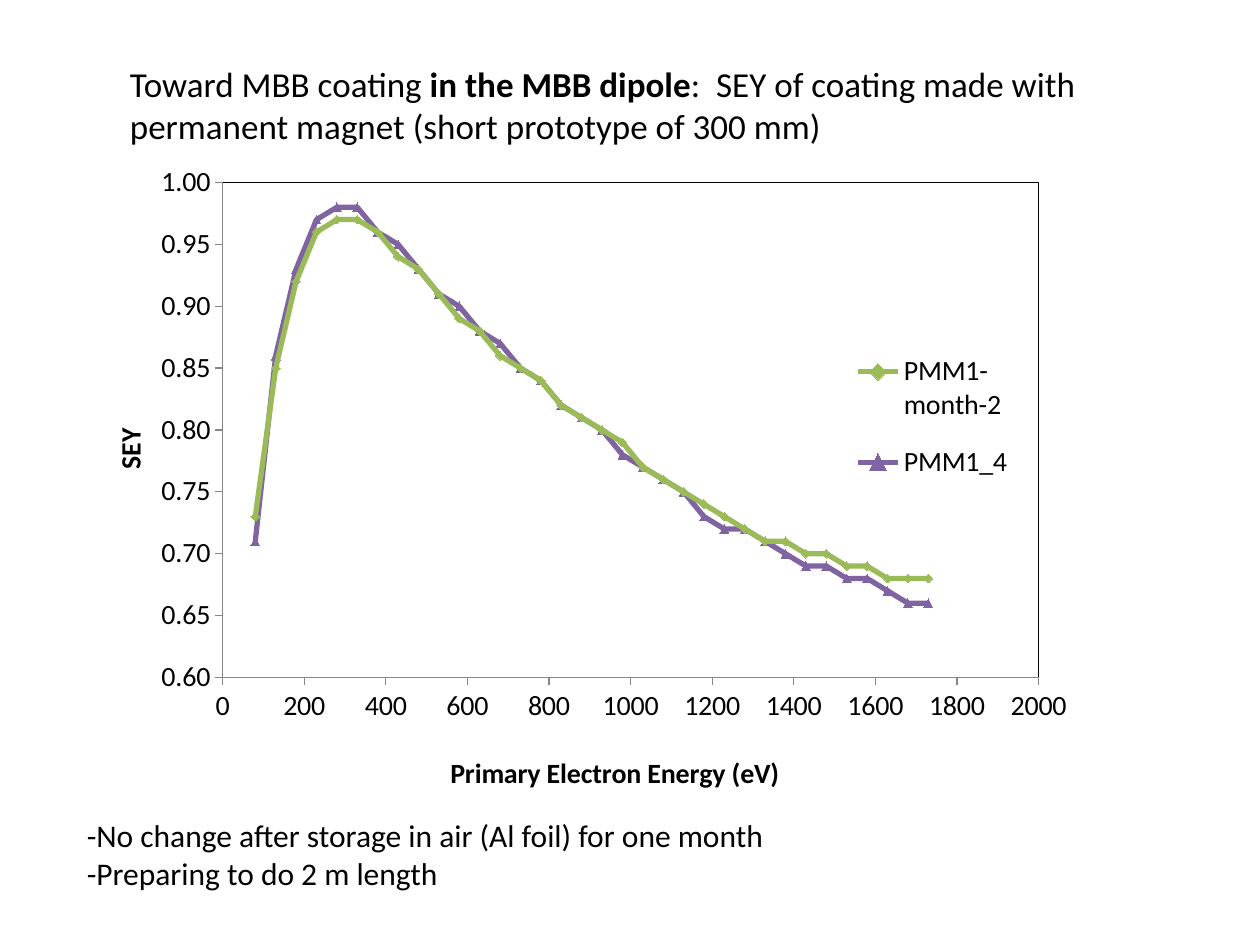
"""Build the slide on the SEY of coatings made with a permanent magnet."""
import pptx
import pptx.chart.data
import pptx.dml.color
import pptx.enum.chart
import pptx.enum.text
import pptx.oxml
import pptx.oxml.ns
import pptx.util

Pt = pptx.util.Pt
RGB = pptx.dml.color.RGBColor
XL = pptx.enum.chart
MARK = XL.XL_MARKER_STYLE
BLACK = RGB(0, 0, 0)
GREY = RGB(0x86, 0x86, 0x86)
GREEN = RGB(0x9B, 0xBB, 0x59)
PURPLE = RGB(0x80, 0x64, 0xA2)

TITLE = [
    ("Toward MBB coating ", False),
    ("in the MBB dipole", True),
    (":  SEY of coating made with permanent magnet (short prototype of 300 mm)", False),
]
NOTES = [
    "-No change after storage in air (Al foil) for one month",
    "-Preparing to do 2 m length",
]
ENERGIES = range(80, 1731, 50)
SERIES = [
    ("PMM1-month-2", GREEN, MARK.DIAMOND,
     [0.73, 0.85, 0.92, 0.96, 0.97, 0.97, 0.96, 0.94, 0.93, 0.91, 0.89, 0.88,
      0.86, 0.85, 0.84, 0.82, 0.81, 0.8, 0.79, 0.77, 0.76, 0.75, 0.74, 0.73,
      0.72, 0.71, 0.71, 0.7, 0.7, 0.69, 0.69, 0.68, 0.68, 0.68]),
    ("PMM1_4", PURPLE, MARK.TRIANGLE,
     [0.71, 0.86, 0.93, 0.97, 0.98, 0.98, 0.96, 0.95, 0.93, 0.91, 0.9, 0.88,
      0.87, 0.85, 0.84, 0.82, 0.81, 0.8, 0.78, 0.77, 0.76, 0.75, 0.73, 0.72,
      0.72, 0.71, 0.7, 0.69, 0.69, 0.68, 0.68, 0.67, 0.66, 0.66]),
]
AXES = {
    "category_axis": ("Primary Electron Energy (eV)", "0", (0.35, 0.93),
                      {"minimum_scale": 0, "maximum_scale": 2000, "major_unit": 200}),
    "value_axis": ("SEY", "#,##0.00", (0.03, 0.43),
                   {"minimum_scale": 0.6, "maximum_scale": 1, "major_unit": 0.05}),
}
PLOT_BOX = (0.14, 0.06, 0.77, 0.76)
LEGEND_BOX = (0.71, 0.29, 0.2, 0.26)


def apply(obj, **values):
    for name, value in values.items():
        setattr(obj, name, value)


def style_font(font, size, bold=False):
    apply(font, name="Calibri", size=Pt(size), bold=bold)
    font.color.rgb = BLACK


def style_line(line, color, width):
    line.color.rgb = color
    line.width = Pt(width)


def add_run(p, text, size, bold=False):
    r = p.add_run()
    r.text = text
    style_font(r.font, size, bold)


def place(element, box, before, inner=False):
    """Give a chart part a manual layout in fractions of the chart."""
    for old in element.findall(pptx.oxml.ns.qn("c:layout")):
        element.remove(old)
    tags = [("layoutTarget", "inner")] if inner else []
    tags += [("xMode", "edge"), ("yMode", "edge"), *zip("xywh", box)]
    body = "".join(f'<c:{tag} val="{value}"/>' for tag, value in tags)
    layout = pptx.oxml.parse_xml(
        f'<c:layout {pptx.oxml.ns.nsdecls("c")}>'
        f"<c:manualLayout>{body}</c:manualLayout></c:layout>")
    element.find(pptx.oxml.ns.qn(before)).addprevious(layout)


def add_title(s):
    sp = s.shapes.title
    apply(sp, left=Pt(67), top=Pt(32), width=Pt(587), height=Pt(55.5))
    tf = sp.text_frame
    apply(tf, word_wrap=True, auto_size=pptx.enum.text.MSO_AUTO_SIZE.NONE,
          vertical_anchor=pptx.enum.text.MSO_ANCHOR.TOP)
    p = tf.paragraphs[0]
    p.alignment = pptx.enum.text.PP_ALIGN.LEFT
    for text, bold in TITLE:
        add_run(p, text, 20, bold)


def style_axis(axis, title, number_format, corner, scale):
    apply(axis, has_major_gridlines=False, has_title=True,
          major_tick_mark=XL.XL_TICK_MARK.OUTSIDE,
          minor_tick_mark=XL.XL_TICK_MARK.NONE, **scale)
    apply(axis.tick_labels, number_format=number_format, number_format_is_linked=False)
    style_font(axis.tick_labels.font, 16)
    style_line(axis.format.line, GREY, 0.75)
    axis_title = axis.axis_title
    add_run(axis_title.text_frame.paragraphs[0], title, 16, True)
    place(axis_title._element, corner, "c:overlay")


def add_sey_chart(s):
    data = pptx.chart.data.XyChartData()
    for name, _, _, values in SERIES:
        series = data.add_series(name)
        for energy, sey in zip(ENERGIES, values):
            series.add_data_point(energy, sey)
    chart = s.shapes.add_chart(XL.XL_CHART_TYPE.XY_SCATTER_LINES, Pt(42.5), Pt(82),
                               Pt(605.5), Pt(375), data).chart
    apply(chart, has_title=False, has_legend=True)
    style_font(chart.font, 10)
    chart.plots[0].vary_by_categories = False

    for series, (_, color, marker, _) in zip(chart.plots[0].series, SERIES):
        series.smooth = False
        style_line(series.format.line, color, 3)
        apply(series.marker, style=marker, size=5)
        series.marker.format.fill.solid()
        series.marker.format.fill.fore_color.rgb = color
        style_line(series.marker.format.line, color, 0.75)

    for name, settings in AXES.items():
        style_axis(getattr(chart, name), *settings)

    legend = chart.legend
    apply(legend, position=XL.XL_LEGEND_POSITION.RIGHT, include_in_layout=False)
    style_font(legend.font, 16)
    place(legend._element, LEGEND_BOX, "c:overlay")

    plot_area = chart._chartSpace.chart.plotArea
    place(plot_area, PLOT_BOX, "c:scatterChart", inner=True)
    plot_area.append(pptx.oxml.parse_xml(
        f'<c:spPr {pptx.oxml.ns.nsdecls("c", "a")}><a:noFill/><a:ln w="9525">'
        f'<a:solidFill><a:srgbClr val="{BLACK}"/></a:solidFill></a:ln></c:spPr>'))


def add_notes(s):
    tf = s.shapes.add_textbox(Pt(42.5), Pt(463), Pt(406), Pt(51)).text_frame
    tf.word_wrap = False
    for i, text in enumerate(NOTES):
        p = tf.add_paragraph() if i else tf.paragraphs[0]
        add_run(p, text, 18)


def main():
    prs = pptx.Presentation()
    apply(prs, slide_width=Pt(720), slide_height=Pt(540))
    s = prs.slides.add_slide(prs.slide_layouts[5])
    add_title(s)
    add_sey_chart(s)
    add_notes(s)
    prs.save("out.pptx")


if __name__ == "__main__":
    main()
